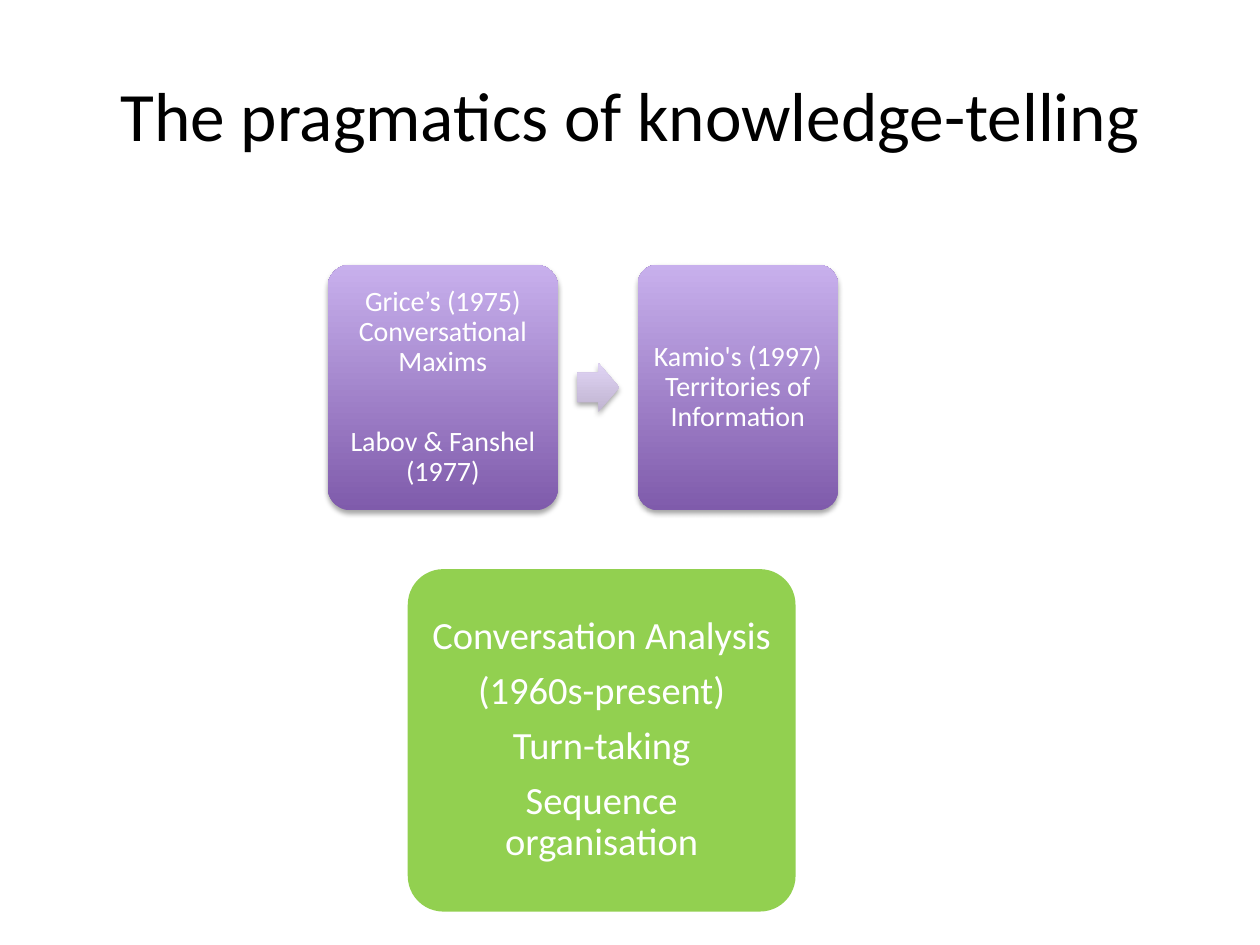
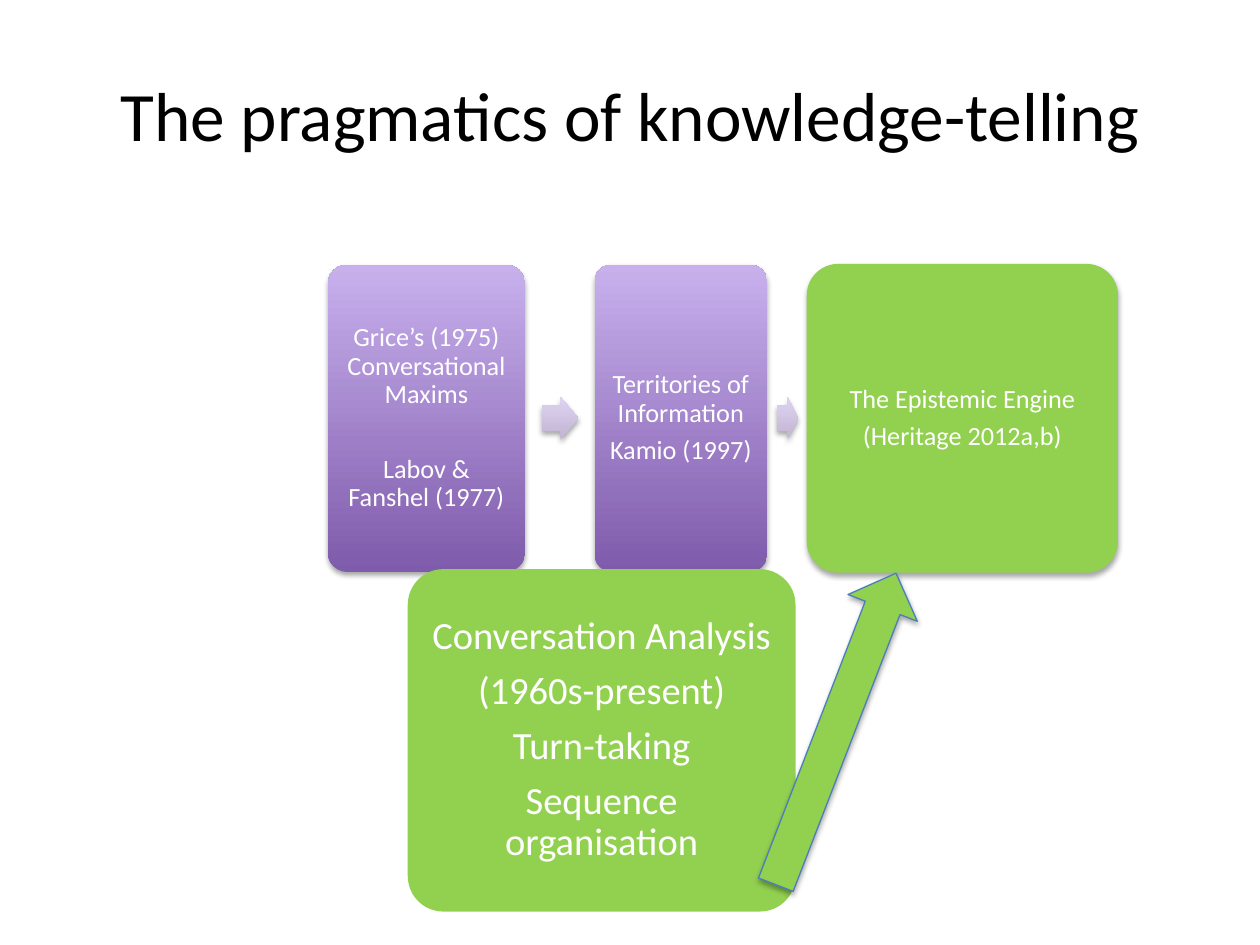
from dataclasses import dataclass

from lxml.etree import SubElement
from pptx import Presentation
from pptx.dml.color import RGBColor
from pptx.enum.shapes import MSO_SHAPE
from pptx.enum.text import MSO_ANCHOR, PP_ALIGN
from pptx.oxml.ns import qn
from pptx.util import Pt


@dataclass(frozen=True)
class Theme:
    font: str = "Calibri"
    black: str = "000000"
    white: str = "FFFFFF"
    green: str = "92D050"
    blue: str = "4B7EBC"
    purple: tuple = ("7F5BAB", "C8B0ED")
    lilac: tuple = ("C0B4D1", "E0D4F4")
    title_size: float = 39.6
    analysis_size: float = 22
    line_spacing: float = 0.9
    paragraph_gap: float = 0.34
    wide_gap: float = 1.76


@dataclass(frozen=True)
class Box:
    left: float
    top: float
    width: float
    height: float

    def lengths(self):
        return [Pt(value) for value in (self.left, self.top, self.width, self.height)]


@dataclass(frozen=True)
class Step:
    width: float
    lines: tuple
    fill: object
    gap_after: float = 0
    wide: bool = False


THEME = Theme()
TITLE = "The pragmatics of knowledge-telling"
TITLE_BOX = Box(36, 20.2, 648, 90)
ANALYSIS_BOX = Box(234, 326.2, 219.6, 193.7)
ANALYSIS_LINES = (
    "Conversation Analysis", "(1960s-present)", "Turn-taking", "Sequence organisation")
MAXIMS_LINES = ("Grice’s (1975) Conversational Maxims", "Labov & Fanshel (1977)")


def style_runs(para, size, color):
    for span in para.runs:
        span.font.name = THEME.font
        span.font.size = Pt(size)
        span.font.color.rgb = RGBColor.from_string(color)


def paint(shape, fill):
    if isinstance(fill, str):
        shape.fill.solid()
        shape.fill.fore_color.rgb = RGBColor.from_string(fill)
        return
    shape.fill.gradient()
    shape.fill.gradient_angle = 90
    for stop, color in zip(shape.fill.gradient_stops, fill):
        stop.color.rgb = RGBColor.from_string(color)


def cast_shadow(shape):
    effects = shape._element.spPr.find(qn("a:effectLst"))
    shadow = SubElement(
        effects, qn("a:outerShdw"), blurRad=str(Pt(3.1)), dist=str(Pt(1.8)),
        dir="5400000", rotWithShape="0")
    color = SubElement(shadow, qn("a:srgbClr"), val=THEME.black)
    SubElement(color, qn("a:alpha"), val="35000")


def add_block(page, kind, box, fill, line=None, line_width=0.75, shadow=True):
    shape = page.shapes.add_shape(kind, *box.lengths())
    paint(shape, fill)
    if line:
        shape.line.color.rgb = RGBColor.from_string(line)
        shape.line.width = Pt(line_width)
    else:
        shape.line.fill.background()
    shape.shadow.inherit = False
    if shadow:
        cast_shadow(shape)
    return shape


def add_card(page, box, lines, size, fill, inset, wide=False, **style):
    card = add_block(page, MSO_SHAPE.ROUNDED_RECTANGLE, box, fill, **style)
    card.adjustments[0] = 0.1
    frame = card.text_frame
    frame.word_wrap = True
    frame.vertical_anchor = MSO_ANCHOR.MIDDLE
    frame.margin_left = frame.margin_right = Pt(inset)
    frame.margin_top = frame.margin_bottom = Pt(inset)
    frame.text = "\n".join(lines)
    gap = THEME.wide_gap if wide else THEME.paragraph_gap
    for para in frame.paragraphs:
        para.alignment = PP_ALIGN.CENTER
        para.line_spacing = THEME.line_spacing
        para.space_after = Pt(round(gap * size, 1))
        style_runs(para, size, THEME.white)
    frame.paragraphs[-1].space_after = Pt(0)


def add_title(page, box):
    title = page.shapes.title
    title.left, title.top, title.width, title.height = box.lengths()
    frame = title.text_frame
    frame.text = TITLE
    frame.vertical_anchor = MSO_ANCHOR.MIDDLE
    frame.paragraphs[0].alignment = PP_ALIGN.CENTER
    style_runs(frame.paragraphs[0], THEME.title_size, THEME.black)


def add_chain(page, box, steps, size, arrow_height, inset):
    left = box.left
    for step in steps:
        add_card(
            page, Box(left, box.top, step.width, box.height), step.lines, size,
            step.fill, inset, step.wide,
            line=step.fill if isinstance(step.fill, str) else None)
        left += step.width
        if step.gap_after:
            arrow_box = Box(
                left + 0.24 * step.gap_after,
                box.top + (box.height - arrow_height) / 2,
                0.53 * step.gap_after, arrow_height)
            arrow = add_block(page, MSO_SHAPE.RIGHT_ARROW, arrow_box, THEME.lilac)
            arrow.adjustments[0] = 0.6
        left += step.gap_after


def add_link(page, box, rotation):
    link = add_block(page, MSO_SHAPE.RIGHT_ARROW, box, THEME.green, THEME.blue)
    link.rotation = rotation


def add_page(deck, chain_box, steps, size, arrow_height, inset):
    page = deck.slides.add_slide(deck.slide_layouts[5])
    add_title(page, TITLE_BOX)
    add_chain(page, chain_box, steps, size, arrow_height, inset)
    add_card(
        page, ANALYSIS_BOX, ANALYSIS_LINES, THEME.analysis_size, THEME.green, 6.5,
        line=THEME.green, line_width=2, shadow=False)
    return page


def main():
    deck = Presentation()
    deck.slide_width, deck.slide_height = Pt(720), Pt(540)

    early_steps = (
        Step(131.8, MAXIMS_LINES, THEME.purple, 45.4, True),
        Step(114.5, ("Kamio's (1997) Territories of Information",), THEME.purple),
    )
    add_page(deck, Box(187.2, 151.2, 368, 140.4), early_steps, 16, 28, 5)

    full_steps = (
        Step(113, MAXIMS_LINES, THEME.purple, 39.6, True),
        Step(98.6, ("Territories of Information", "Kamio (1997)"), THEME.purple, 23),
        Step(177.1, ("The Epistemic Engine", "(Heritage 2012a,b)"), THEME.green),
    )
    page = add_page(deck, Box(187.2, 151.2, 451.3, 175.7), full_steps, 15, 24.5, 4.4)
    add_link(page, Box(382.3, 395.3, 190.8, 42.5), 291.1)

    deck.save("out.pptx")


if __name__ == "__main__":
    main()
